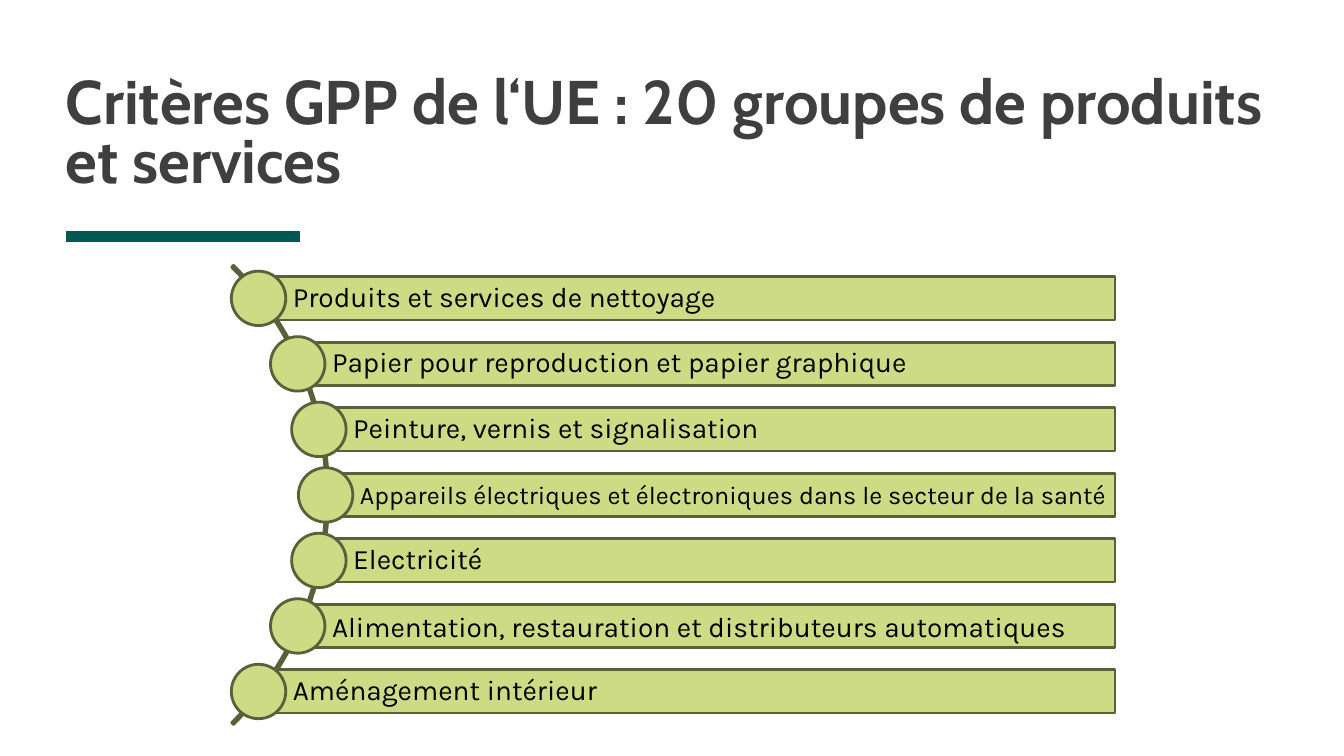
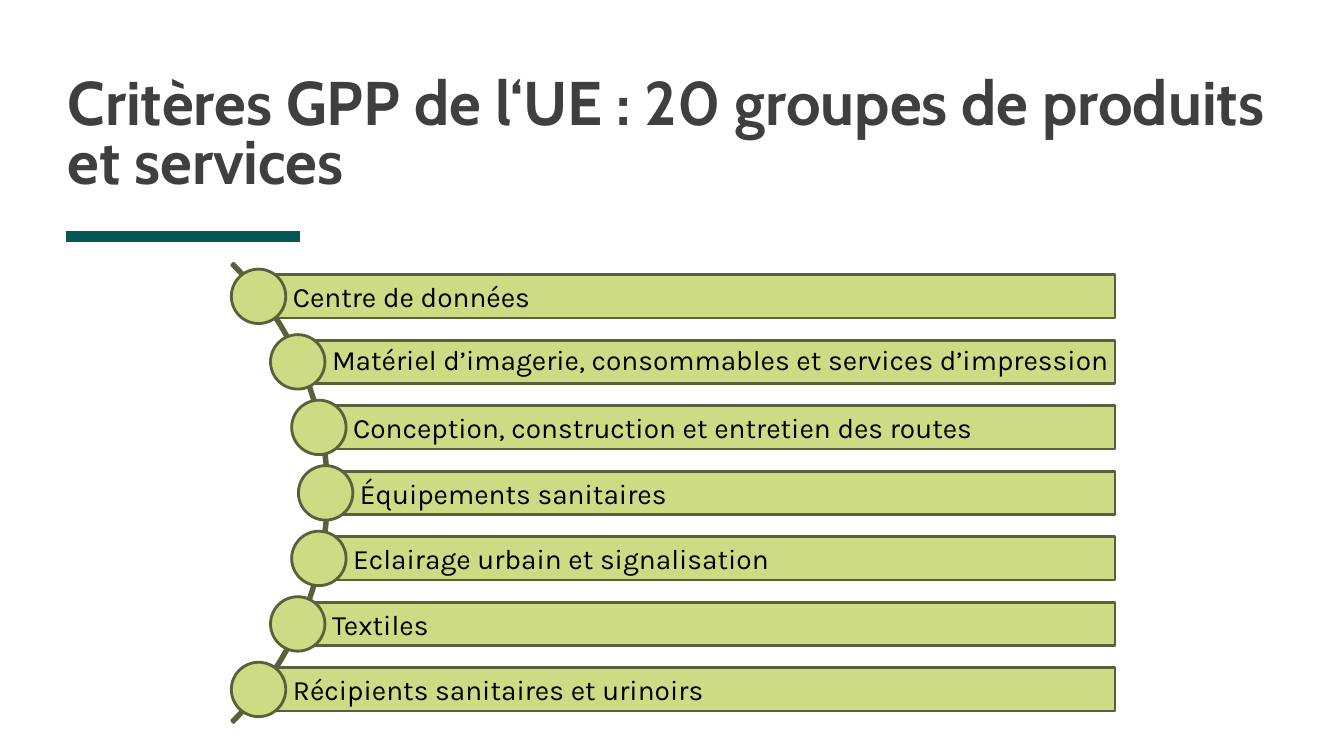
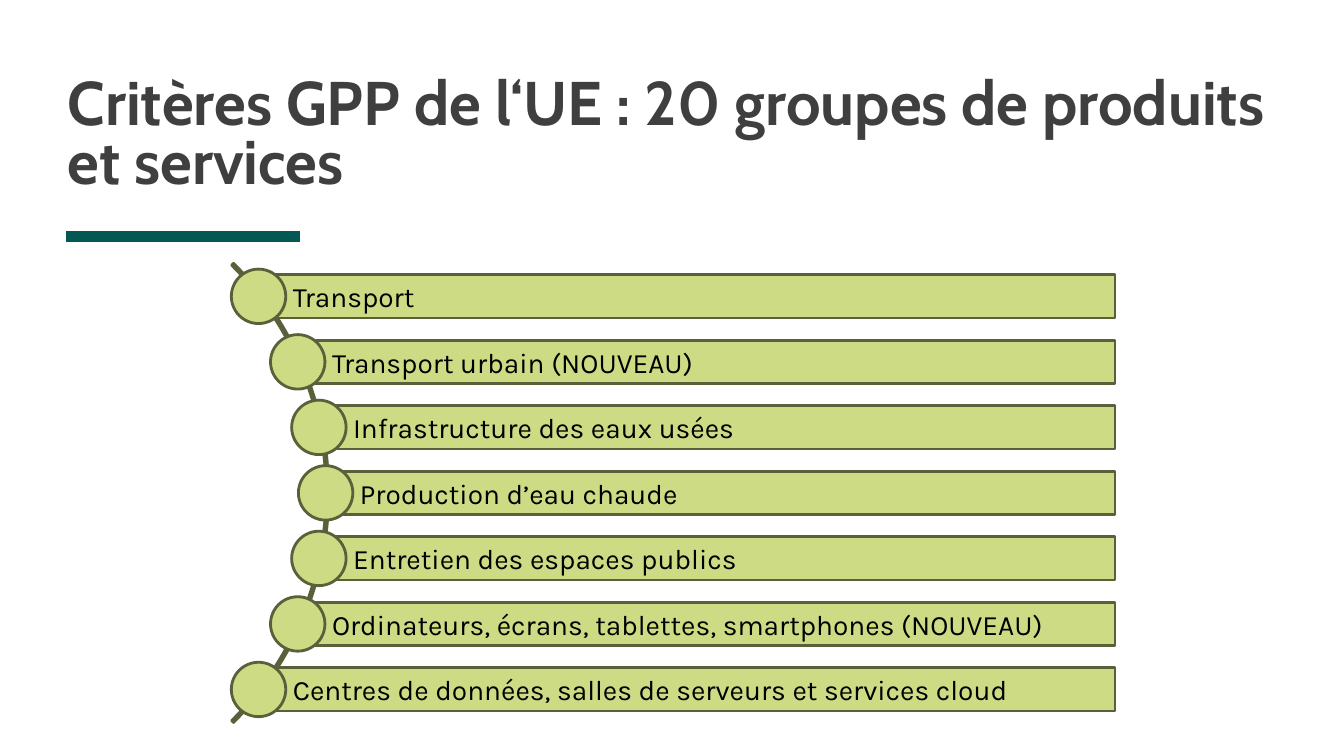
from dataclasses import dataclass
from math import sqrt

from lxml.etree import SubElement
from pptx import Presentation
from pptx.dml.color import RGBColor
from pptx.enum.shapes import MSO_CONNECTOR, MSO_SHAPE
from pptx.enum.text import MSO_ANCHOR, MSO_AUTO_SIZE, PP_ALIGN
from pptx.oxml.ns import qn
from pptx.util import Inches, Pt

TITLE = "Critères GPP de l‘UE : 20 groupes de produits et services"
TITLE_FONT, BODY_FONT = "Cabin", "Karla"
TITLE_COLOUR, TEXT_COLOUR = "3F3F3F", "000000"
RULE_COLOUR, FILL_COLOUR, LINE_COLOUR = "035854", "CCDB84", "59603A"

ARC_CENTRE_X = 0.04
ARC_RADIUS = 3.22
DOT_ORBIT = 3.19
DOT_SIZE = 0.54
BAR_HEIGHT = 0.43
BAR_RIGHT = 11.06
ROW_PITCH = 0.65


@dataclass(frozen=True)
class Row:
    text: str
    line_spacing: float = 1.0
    size: int = 20


@dataclass(frozen=True)
class ProductPage:
    title_left: float
    title_top: float
    centre_y: float
    rows: tuple[Row, ...]


PAGES = (
    ProductPage(0.65, 0.22, 4.91, (
        Row("Produits et services de nettoyage", 0.9),
        Row("Papier pour reproduction et papier graphique", 0.9),
        Row("Peinture, vernis et signalisation", 0.9),
        Row("Appareils électriques et électroniques dans le secteur de la santé", size=18),
        Row("Electricité", 0.9),
        Row("Alimentation, restauration et distributeurs automatiques"),
        Row("Aménagement intérieur", 0.9),
    )),
    ProductPage(0.67, 0.23, 4.89, (
        Row("Centre de données"),
        Row("Matériel d’imagerie, consommables et services d’impression", 0.9),
        Row("Conception, construction et entretien des routes"),
        Row("Équipements sanitaires"),
        Row("Eclairage urbain et signalisation"),
        Row("Textiles"),
        Row("Récipients sanitaires et urinoirs"),
    )),
    ProductPage(0.67, 0.23, 4.89, (
        Row("Transport"),
        Row("Transport urbain (NOUVEAU)"),
        Row("Infrastructure des eaux usées"),
        Row("Production d’eau chaude"),
        Row("Entretien des espaces publics"),
        Row("Ordinateurs, écrans, tablettes, smartphones (NOUVEAU)"),
        Row("Centres de données, salles de serveurs et services cloud"),
    )),
)


def colour(value: str) -> RGBColor:
    return RGBColor.from_string(value)


def add_green_shape(page, kind, left: float, top: float, width: float, height: float):
    shape = page.shapes.add_shape(
        kind, Inches(left), Inches(top), Inches(width), Inches(height))
    shape.shadow.inherit = False
    shape.fill.solid()
    shape.fill.fore_color.rgb = colour(FILL_COLOUR)
    shape.line.color.rgb = colour(LINE_COLOUR)
    shape.line.width = Pt(2)
    return shape


def write_text(shape, text: str, font: str, size: int, text_colour: str,
               line_spacing: float, anchor, margins: tuple[float, ...],
               bold: bool = False) -> None:
    """Fill a shape with one left-aligned paragraph; margins run left, top, right, bottom."""
    frame = shape.text_frame
    frame.text = text
    frame.word_wrap = True
    frame.auto_size = MSO_AUTO_SIZE.NONE
    frame.vertical_anchor = anchor
    (frame.margin_left, frame.margin_top,
     frame.margin_right, frame.margin_bottom) = map(Inches, margins)
    para = frame.paragraphs[0]
    para.alignment = PP_ALIGN.LEFT
    para.line_spacing = line_spacing
    para.font.name = font
    para.font.size = Pt(size)
    para.font.bold = bold
    para.font.color.rgb = colour(text_colour)


def add_heading(page, left: float, top: float) -> None:
    rule = page.shapes.add_connector(
        MSO_CONNECTOR.STRAIGHT, Inches(0.65), Inches(2.35), Inches(2.98), Inches(2.35))
    rule.line.color.rgb = colour(RULE_COLOUR)
    rule.line.width = Pt(8)
    SubElement(rule.element.spPr, qn("a:effectLst"))

    title = page.shapes.title
    title.left, title.top = Inches(left), Inches(top)
    title.width, title.height = Inches(12), Inches(1.72)
    write_text(title, TITLE, TITLE_FONT, 44, TITLE_COLOUR, 0.8,
               MSO_ANCHOR.BOTTOM, (0, 0, 0, 0), bold=True)


def add_curved_list(page, centre_y: float, rows: tuple[Row, ...]) -> None:
    """Draw bars whose dots follow an arc around a centre at the left edge."""
    arc = add_green_shape(page, MSO_SHAPE.BLOCK_ARC, ARC_CENTRE_X - ARC_RADIUS,
                          centre_y - ARC_RADIUS, 2 * ARC_RADIUS, 2 * ARC_RADIUS)
    for index, value in enumerate((189, 27, 0.004)):
        arc.adjustments[index] = value

    for index, row in enumerate(rows):
        offset = (index - (len(rows) - 1) / 2) * ROW_PITCH
        x = ARC_CENTRE_X + sqrt(DOT_ORBIT ** 2 - offset ** 2)
        y = centre_y + offset
        bar = add_green_shape(page, MSO_SHAPE.RECTANGLE, x, y - BAR_HEIGHT / 2,
                              BAR_RIGHT - x, BAR_HEIGHT)
        write_text(bar, row.text, BODY_FONT, row.size, TEXT_COLOUR, row.line_spacing,
                   MSO_ANCHOR.MIDDLE, (0.34, 0.06, 0.06, 0.06))
        add_green_shape(page, MSO_SHAPE.OVAL, x - DOT_SIZE / 2, y - DOT_SIZE / 2,
                        DOT_SIZE, DOT_SIZE)


def main() -> None:
    deck = Presentation()
    deck.slide_width, deck.slide_height = Inches(13.33), Inches(7.5)
    title_only = deck.slide_layouts.get_by_name("Title Only")
    for content in PAGES:
        page = deck.slides.add_slide(title_only)
        add_heading(page, content.title_left, content.title_top)
        add_curved_list(page, content.centre_y, content.rows)
    deck.save("out.pptx")


if __name__ == "__main__":
    main()
